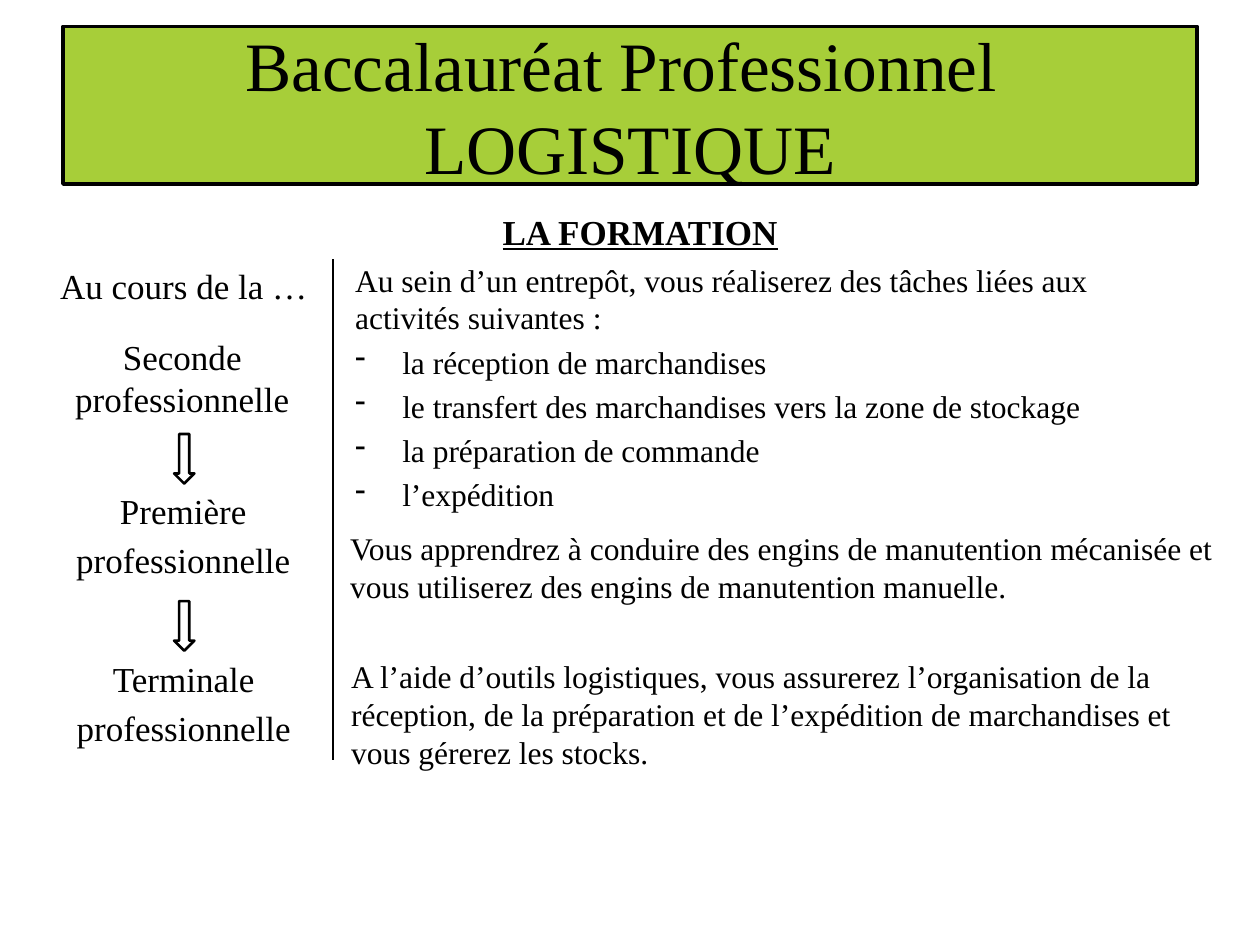
import pptx
import pptx.util
import pptx.dml.color
import pptx.enum.shapes
import pptx.enum.text
import pptx.oxml.ns
import lxml.etree

Cm = pptx.util.Cm
Pt = pptx.util.Pt
ALIGN = pptx.enum.text.PP_ALIGN
FONT = "Times New Roman"
BLACK = "000000"
GREEN = "A7CE39"


def tint(code):
    """Turn a hex string into a colour."""
    return pptx.dml.color.RGBColor.from_string(code)


def child(node, tag, **attrs):
    """Append a drawing element to a node."""
    return lxml.etree.SubElement(node, pptx.oxml.ns.qn(tag), attrs)


def ink(shape, width):
    """Give a shape a black outline."""
    shape.line.color.rgb = tint(BLACK)
    shape.line.width = Pt(width)


def write(para, text, size, bold=False):
    """Add one run to a paragraph; bold runs are underlined too."""
    run = para.add_run()
    run.text = text
    font = run.font
    font.name, font.size = FONT, Pt(size)
    font.bold = font.underline = bold
    font.color.rgb = tint(BLACK)


def dash(para):
    """Make a paragraph a dashed list item."""
    props = para._p.get_or_add_pPr()
    props.set("marL", str(Cm(0.95)))
    props.set("indent", str(-Cm(0.95)))
    child(props, "a:buFontTx")
    child(props, "a:buChar", char="-")


def add_text(slide, box, lines, size, align=ALIGN.LEFT, gap=0.2, bold=False):
    """Add a text box with one paragraph per line."""
    frame = slide.shapes.add_textbox(*map(Cm, box)).text_frame
    frame.word_wrap = True
    for i, line in enumerate(lines):
        para = frame.add_paragraph() if i else frame.paragraphs[0]
        para.alignment = align
        para.space_before = Pt(gap * size)
        write(para, line, size, bold)
    return frame


def add_title(slide, lines):
    """Place and format the title banner."""
    title = slide.shapes.title
    title.left, title.top, title.width, title.height = map(Cm, (1.27, 0.53, 22.86, 3.18))
    title.fill.solid()
    title.fill.fore_color.rgb = tint(GREEN)
    ink(title, 2)
    frame = title.text_frame
    frame.auto_size = pptx.enum.text.MSO_AUTO_SIZE.NONE
    frame.vertical_anchor = pptx.enum.text.MSO_ANCHOR.MIDDLE
    para = frame.paragraphs[0]
    para.alignment = ALIGN.CENTER
    for i, line in enumerate(lines):
        if i:
            para.add_line_break()
        write(para, line, 39.6)


def add_arrow(slide, top):
    """Add a hollow down arrow between two years."""
    kind = pptx.enum.shapes.MSO_SHAPE.DOWN_ARROW
    arrow = slide.shapes.add_shape(kind, Cm(3.51), Cm(top), Cm(0.41), Cm(1))
    arrow.shadow.inherit = False
    arrow.fill.background()
    ink(arrow, 1.5)


def add_rule(slide, left, top, end):
    """Add the upright line between the columns."""
    kind = pptx.enum.shapes.MSO_CONNECTOR.STRAIGHT
    rule = slide.shapes.add_connector(kind, Cm(left), Cm(top), Cm(left), Cm(end))
    ink(rule, 0.75)
    child(rule._element.spPr, "a:effectLst")


def main():
    """Build the slide and save it."""
    deck = pptx.Presentation()
    deck.slide_width, deck.slide_height = Cm(25.4), Cm(19.05)
    slide = deck.slides.add_slide(deck.slide_layouts[5])
    add_title(slide, ["Baccalauréat Professionnel ", "LOGISTIQUE"])
    add_text(slide, (1.5, 4.11, 22.81, 1.12), ["LA FORMATION"], 20,
             ALIGN.CENTER, gap=0, bold=True)

    years = [
        ((0.71, 5.21, 5.99, 1.3), ["Au cours de la …"]),
        ((1.07, 6.63, 5.21, 2.59), ["Seconde professionnelle"]),
        ((1.09, 9.75, 5.21, 2.59), ["Première", "professionnelle"]),
        ((1.1, 13.13, 5.21, 2.59), ["Terminale", "professionnelle"]),
    ]
    for box, lines in years:
        add_text(slide, box, lines, 20, ALIGN.CENTER)
    for top in (8.75, 12.12):
        add_arrow(slide, top)
    add_rule(slide, 6.71, 5.23, 15.32)

    tasks = add_text(slide, (6.91, 5.13, 17.4, 5.38), [
        "Au sein d’un entrepôt, vous réaliserez des tâches liées aux activités suivantes :",
        "la réception de marchandises",
        "le transfert des marchandises vers la zone de stockage",
        "la préparation de commande",
        "l’expédition",
    ], 18)
    for para in tasks.paragraphs[1:]:
        dash(para)
    add_text(slide, (6.81, 10.54, 18.14, 2.08), [
        "Vous apprendrez à conduire des engins de manutention mécanisée et "
        "vous utiliserez des engins de manutention manuelle."], 18)
    add_text(slide, (6.83, 13.13, 17.73, 1.42), [
        "A l’aide d’outils logistiques, vous assurerez l’organisation de la "
        "réception, de la préparation et de l’expédition de marchandises et "
        "vous gérerez les stocks."], 18)
    deck.save("out.pptx")


if __name__ == "__main__":
    main()
